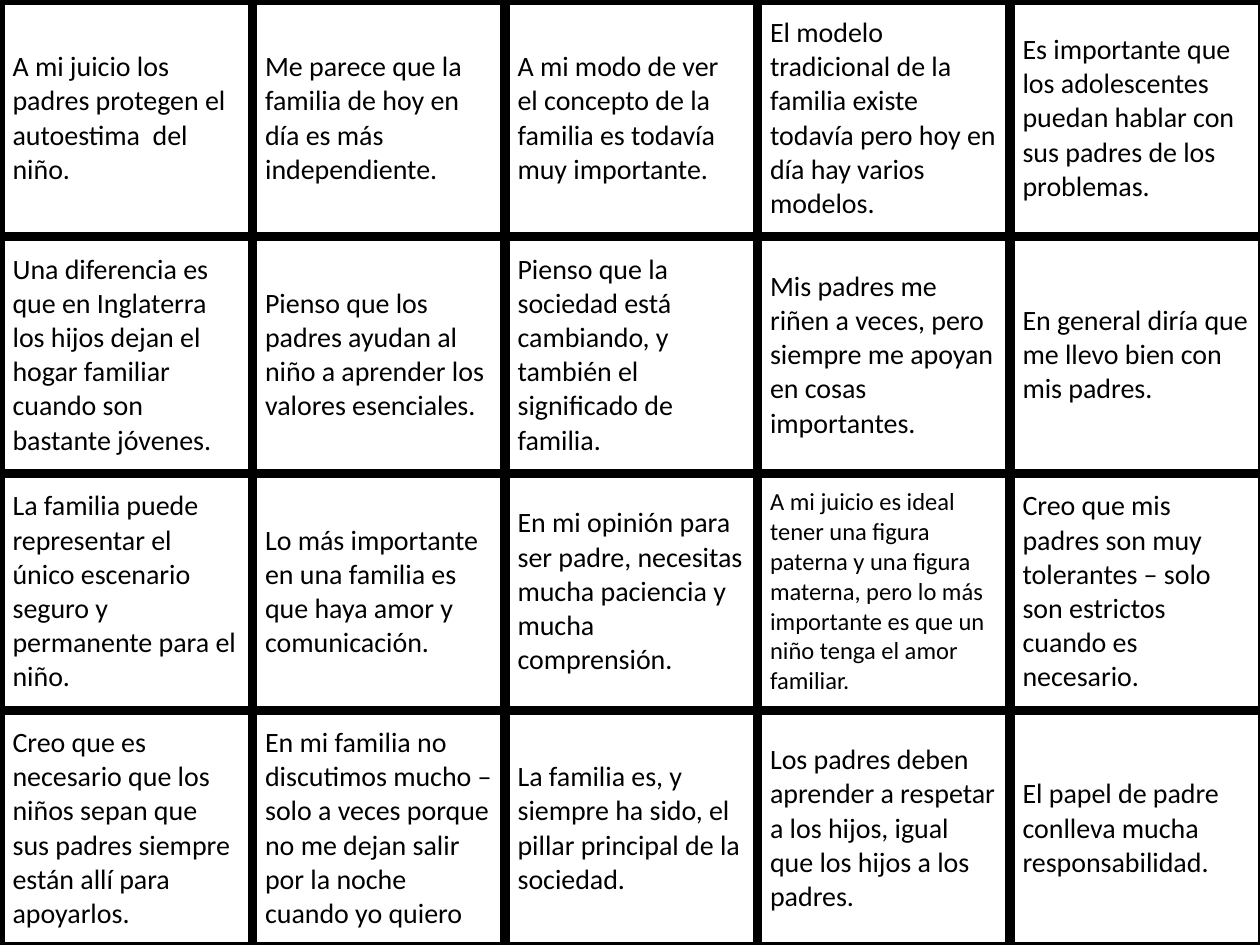
from lxml import etree
from pptx import Presentation
from pptx import util as u
from pptx.dml.color import RGBColor
from pptx.enum import text
from pptx.oxml import ns

BLACK = RGBColor(0, 0, 0)
FONT = "Calibri"
BORDER_POINTS = 6
TEXT_POINTS = 16
LONG_TEXT_POINTS = 14
LONG_TEXT_LENGTH = 120
TABLE_SHARE = 1.002

OPINIONS = [
    [
        "A mi juicio los padres protegen el autoestima  del niño.",
        "Me parece que la familia de hoy en día es más independiente.",
        "A mi modo de ver el concepto de la familia es todavía muy importante.",
        "El modelo tradicional de la familia existe todavía pero hoy en día hay varios modelos.",
        "Es importante que los adolescentes puedan hablar con sus padres de los problemas.",
    ],
    [
        "Una diferencia es que en Inglaterra los hijos dejan el hogar familiar cuando son bastante jóvenes.",
        "Pienso que los padres ayudan al niño a aprender los valores esenciales.",
        "Pienso que la\nsociedad está cambiando, y también el significado de familia.",
        "Mis padres me riñen a veces, pero siempre me apoyan en cosas importantes.",
        "En general diría que me llevo bien con mis padres.",
    ],
    [
        "La familia puede representar el único escenario seguro y permanente para el niño.",
        "Lo más importante en una familia es que haya amor y comunicación.",
        "En mi opinión para ser padre, necesitas mucha paciencia y mucha comprensión.",
        "A mi juicio es ideal tener una figura paterna y una figura materna, "
        "pero lo más importante es que un niño tenga el amor familiar.",
        "Creo que mis padres son muy tolerantes – solo son estrictos cuando es necesario.",
    ],
    [
        "Creo que es necesario que los niños sepan que sus padres siempre están allí para apoyarlos.",
        "En mi familia no discutimos mucho – solo a veces porque no me dejan salir por la noche\n"
        "cuando yo quiero",
        "La familia es, y siempre ha sido, el pillar principal de la sociedad.",
        "Los padres deben aprender a respetar a los hijos, igual que los hijos a los padres.",
        "El papel de padre conlleva mucha responsabilidad.",
    ],
]


def add_borders(cell):
    properties = cell._tc.get_or_add_tcPr()
    for position, side in enumerate(("lnL", "lnR", "lnT", "lnB")):
        line = etree.Element(ns.qn(f"a:{side}"), w=str(u.Pt(BORDER_POINTS)))
        fill = etree.SubElement(line, ns.qn("a:solidFill"))
        etree.SubElement(fill, ns.qn("a:srgbClr"), val=str(BLACK))
        properties.insert(position, line)


def write_opinion(cell, opinion):
    size = LONG_TEXT_POINTS if len(opinion) > LONG_TEXT_LENGTH else TEXT_POINTS
    frame = cell.text_frame
    for index, sentence in enumerate(opinion.split("\n")):
        paragraph = frame.add_paragraph() if index else frame.paragraphs[0]
        run = paragraph.add_run()
        run.text = sentence
        run.font.name = FONT
        run.font.size = u.Pt(size)
        run.font.bold = False
        run.font.color.rgb = BLACK


def add_opinion_table(slide, width, height):
    rows, columns = len(OPINIONS), len(OPINIONS[0])
    table = slide.shapes.add_table(rows, columns, 0, 0, width, height).table
    table.first_row = False
    table.horz_banding = False
    for row, opinions in enumerate(OPINIONS):
        for column, opinion in enumerate(opinions):
            cell = table.cell(row, column)
            cell.vertical_anchor = text.MSO_ANCHOR.MIDDLE
            cell.fill.background()
            add_borders(cell)
            write_opinion(cell, opinion)


def main():
    presentation = Presentation()
    presentation.slide_width = u.Inches(10)
    presentation.slide_height = u.Inches(7.5)
    slide = presentation.slides.add_slide(presentation.slide_layouts[6])
    add_opinion_table(
        slide,
        int(presentation.slide_width * TABLE_SHARE),
        int(presentation.slide_height * TABLE_SHARE),
    )
    presentation.save("out.pptx")


if __name__ == "__main__":
    main()
